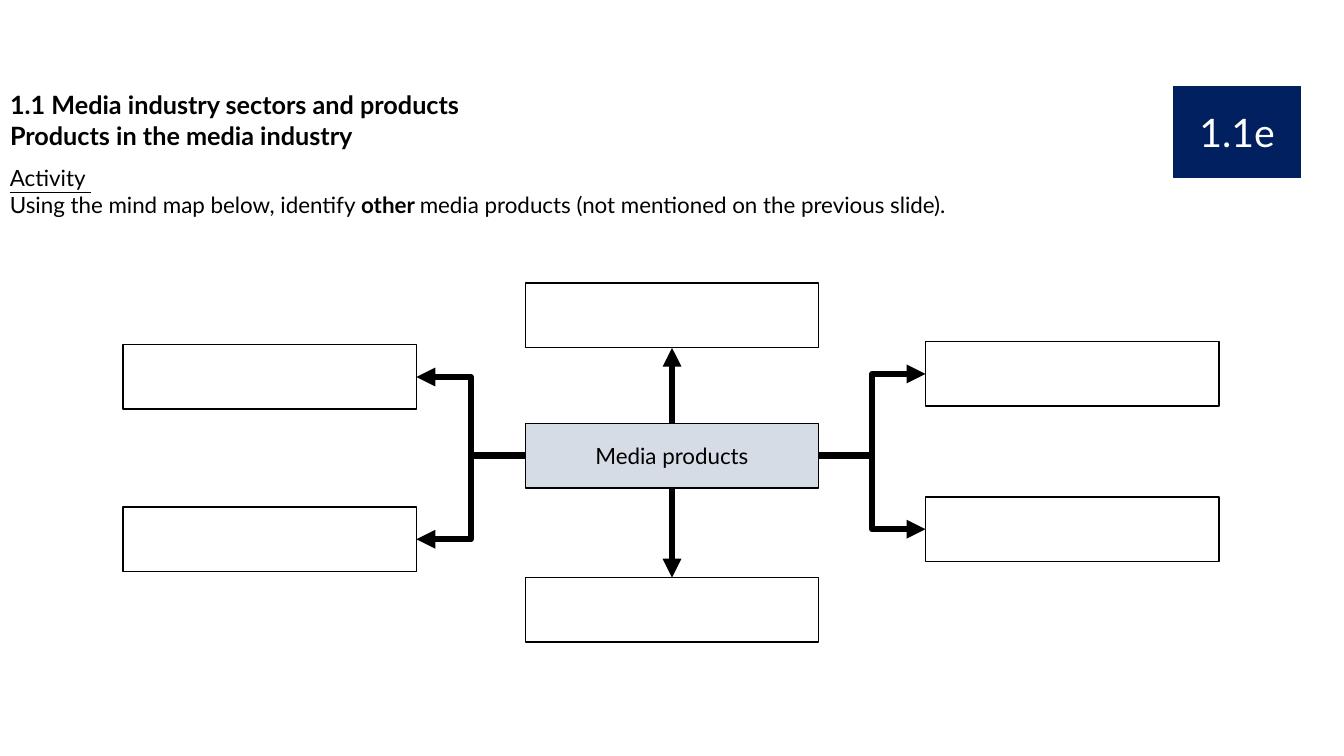
from dataclasses import dataclass

from lxml import etree
from pptx import Presentation
from pptx.dml.color import RGBColor
from pptx.enum import shapes, text
from pptx.oxml import ns
from pptx.util import Inches, Pt

BLACK = RGBColor(0x00, 0x00, 0x00)
WHITE = RGBColor(0xFF, 0xFF, 0xFF)
NAVY = RGBColor(0x00, 0x20, 0x60)
PALE_BLUE = RGBColor(0xD6, 0xDC, 0xE5)
FONT = "Lato"
BOX_W, BOX_H = 2.91, 0.64
CENTRE_X = 5.21
TOP, LEFT, BOTTOM, RIGHT = range(4)


@dataclass
class Box:
    left: float
    top: float
    width: float = BOX_W
    height: float = BOX_H
    fill: RGBColor = WHITE
    line: RGBColor = BLACK
    label: str = ""
    size: int = 16
    color: RGBColor = BLACK


@dataclass
class Branch:
    box: Box
    start: int
    end: int
    kind: shapes.MSO_CONNECTOR


BADGE = Box(11.64, 0.86, 1.26, 0.9, NAVY, NAVY, "1.1e", 28, WHITE)
HUB = Box(CENTRE_X, 4.2, fill=PALE_BLUE, label="Media products")
STRAIGHT, ELBOW = shapes.MSO_CONNECTOR.STRAIGHT, shapes.MSO_CONNECTOR.ELBOW
BRANCHES = [
    Branch(Box(CENTRE_X, 2.81), TOP, BOTTOM, STRAIGHT),
    Branch(Box(CENTRE_X, 5.73), BOTTOM, TOP, STRAIGHT),
    Branch(Box(9.18, 3.39), RIGHT, LEFT, ELBOW),
    Branch(Box(9.18, 4.93), RIGHT, LEFT, ELBOW),
    Branch(Box(1.22, 3.42), LEFT, RIGHT, ELBOW),
    Branch(Box(1.22, 5.03), LEFT, RIGHT, ELBOW),
]


def add_run(p, words: str, size: int, color: RGBColor = BLACK,
            bold: bool = False, underline: bool = False) -> None:
    r = p.add_run()
    r.text = words
    r.font.name = FONT
    r.font.size = Pt(size)
    r.font.color.rgb = color
    r.font.bold = bold
    r.font.underline = underline


def add_box(s, box: Box):
    sp = s.shapes.add_shape(
        shapes.MSO_SHAPE.RECTANGLE, Inches(box.left), Inches(box.top),
        Inches(box.width), Inches(box.height))
    sp.shadow.inherit = False
    sp.fill.solid()
    sp.fill.fore_color.rgb = box.fill
    sp.line.color.rgb = box.line
    sp.line.width = Pt(1)
    if box.label:
        tf = sp.text_frame
        tf.vertical_anchor = text.MSO_ANCHOR.MIDDLE
        p = tf.paragraphs[0]
        p.alignment = text.PP_ALIGN.CENTER
        add_run(p, box.label, box.size, box.color)
    return sp


def add_arrow(s, hub, target, branch: Branch) -> None:
    cxn = s.shapes.add_connector(branch.kind, 0, 0, 0, 0)
    cxn.begin_connect(hub, branch.start)
    cxn.end_connect(target, branch.end)
    cxn.line.color.rgb = BLACK
    cxn.line.width = Pt(4.5)
    etree.SubElement(cxn.line._get_or_add_ln(), ns.qn("a:tailEnd"), type="triangle")
    etree.SubElement(cxn._element.spPr, ns.qn("a:effectLst"))


def add_heading(s) -> None:
    title = s.shapes.title
    title.left, title.top = Inches(0), Inches(0.84)
    title.width, title.height = Inches(6.7), Inches(0.71)
    tf = title.text_frame
    tf.auto_size = text.MSO_AUTO_SIZE.NONE
    tf.vertical_anchor = text.MSO_ANCHOR.TOP
    lines = ["1.1 Media industry sectors and products", "Products in the media industry"]
    for i, line in enumerate(lines):
        p = tf.add_paragraph() if i else tf.paragraphs[0]
        p.alignment = text.PP_ALIGN.LEFT
        add_run(p, line, 18, bold=True)


def add_activity(s) -> None:
    sp = s.shapes.add_textbox(Inches(0), Inches(1.58), Inches(11.81), Inches(0.64))
    tf = sp.text_frame
    tf.word_wrap = True
    add_run(tf.paragraphs[0], "Activity ", 16, underline=True)
    p = tf.add_paragraph()
    add_run(p, "Using the mind map below, identify ", 16)
    add_run(p, "other ", 16, bold=True)
    add_run(p, "media products (not mentioned on the previous slide).", 16)


def main() -> None:
    prs = Presentation()
    prs.slide_width, prs.slide_height = Inches(13.33), Inches(7.5)
    s = prs.slides.add_slide(prs.slide_layouts.get_by_name("Title Only"))
    add_heading(s)
    add_box(s, BADGE)
    hub = add_box(s, HUB)
    targets = [add_box(s, branch.box) for branch in BRANCHES]
    for branch, target in zip(BRANCHES, targets):
        add_arrow(s, hub, target, branch)
    add_activity(s)
    prs.save("out.pptx")


if __name__ == "__main__":
    main()
